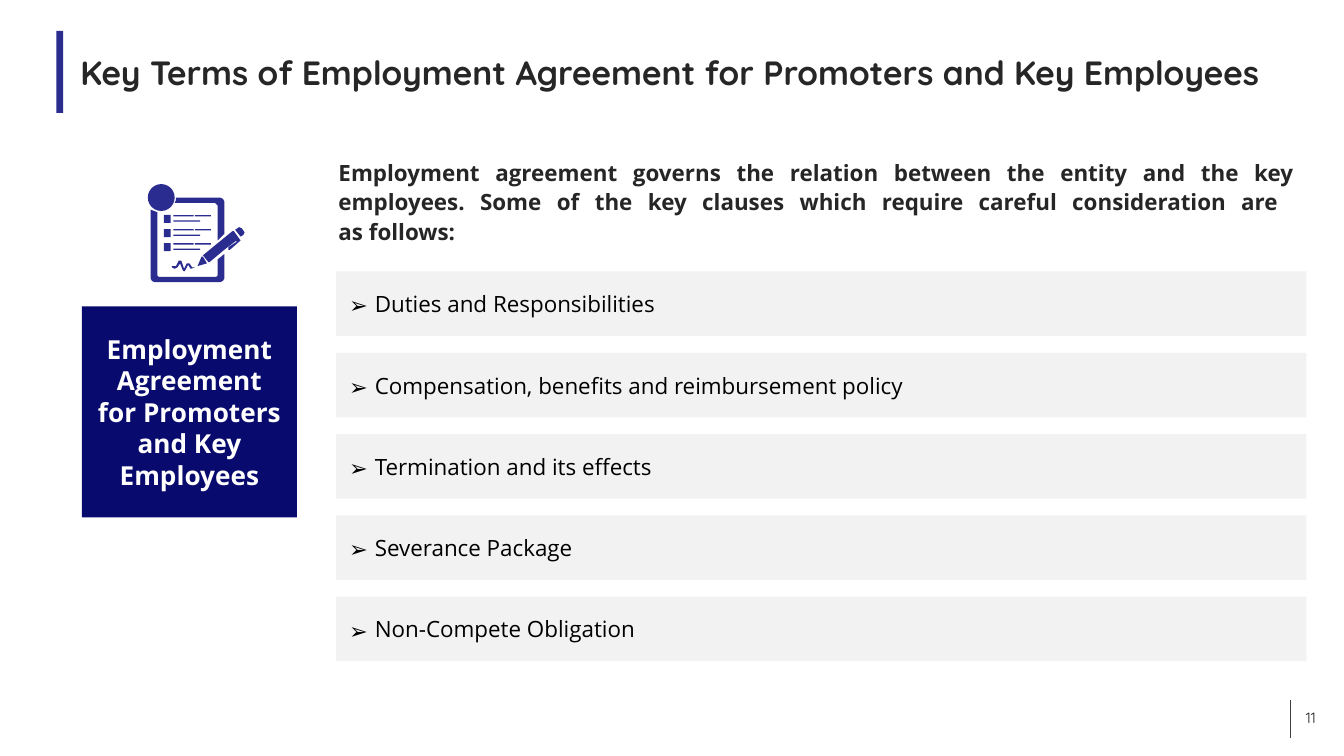
"""Build the slide on key terms of employment agreements."""
from lxml import etree
from pptx import Presentation
from pptx.dml.color import RGBColor
from pptx.enum.shapes import MSO_CONNECTOR as Link, MSO_SHAPE as Kind
from pptx.enum.text import MSO_ANCHOR as Anchor, PP_ALIGN as Align
from pptx.oxml.ns import qn
from pptx.util import Inches, Pt

rgb = RGBColor.from_string
BLUE, NAVY, DARK = "2B2C90", "080A6E", "262626"


def paint(shape, color):
    shape.shadow.inherit = False
    shape.fill.solid()
    shape.fill.fore_color.rgb = rgb(color)
    shape.line.fill.background()


def write(shape, text, size, color, bold=False, align=Align.LEFT,
          face="Open Sans", anchor=Anchor.MIDDLE, mark=None):
    frame = shape.text_frame
    frame.word_wrap = True
    frame.vertical_anchor = anchor
    para = frame.paragraphs[0]
    para.text = text
    para.alignment = align
    if mark:
        props = para._p.get_or_add_pPr()
        props.set("marL", str(Inches(0.19)))
        props.set("indent", str(-Inches(0.19)))
        etree.SubElement(props, qn("a:buFont")).set("typeface", "Noto Sans Symbols")
        etree.SubElement(props, qn("a:buChar")).set("char", mark)
    font = para.font
    font.name, font.size, font.bold = face, Pt(size), bold
    font.color.rgb = rgb(color)
    return para


prs = Presentation()
prs.slide_width = Inches(10)
prs.slide_height = prs.slide_width * 9 // 16
shapes = prs.slides.add_slide(prs.slide_layouts[6]).shapes

bar = shapes.add_shape(Kind.RECTANGLE, Inches(0.42), Inches(0.23), Inches(0.05), Inches(0.61))
paint(bar, BLUE)

rule = shapes.add_connector(Link.STRAIGHT, Inches(9.6), Inches(5.21), Inches(9.6), Inches(5.49))
rule.line.color.rgb = rgb("404040")
rule.line.width = Pt(0.75)
etree.SubElement(rule._element.spPr, qn("a:effectLst"))

title = shapes.add_textbox(Inches(0.5), Inches(0.23), Inches(9), Inches(0.61))
write(title, "Key Terms of Employment Agreement for Promoters and Key Employees",
      18, DARK, True, face="Quicksand")

intro = shapes.add_textbox(Inches(2.42), Inches(1.11), Inches(7.31), Inches(0.76))
para = write(intro, "Employment agreement governs the relation between the entity and the key "
             "employees. Some of the key clauses which require careful consideration are \v"
             "as follows:", 12, DARK, True, Align.JUSTIFY, anchor=Anchor.TOP)
para.line_spacing = Pt(16)
para.space_after = Pt(6)

label = shapes.add_shape(Kind.RECTANGLE, Inches(0.61), Inches(2.28), Inches(1.6), Inches(1.57))
paint(label, NAVY)
write(label, "Employment Agreement for Promoters and Key Employees", 14, "FFFFFF",
      True, Align.CENTER)

outlines = [
    [(112, 156), (117, 158), (117, 205), (118, 206), (161, 206), (162, 205), (162, 193),
     (167, 189), (167, 207), (166, 209), (164, 210), (115, 210), (113, 209), (112, 207)],
    [(131, 147), (164, 147), (166, 148), (167, 150), (167, 174), (162, 179), (162, 153),
     (160, 151), (130, 151), (131, 149)],
    [(173, 172), (174, 172), (179, 179), (171, 186), (170, 186), (170, 184), (176, 180),
     (176, 179), (168, 185), (156, 195), (155, 195), (151, 190)],
    [(175, 171), (178, 169), (180, 170), (182, 173), (181, 175), (179, 176)],
    [(147, 198), (150, 191), (151, 191), (154, 196)],
    [(128, 198), (131, 198), (133, 194), (135, 194), (137, 200), (139, 196), (141, 196),
     (143, 199), (145, 199), (142, 200), (140, 197), (138, 201), (137, 202), (136, 201),
     (134, 196), (132, 199), (130, 200), (128, 199)],
]
for points in outlines:
    pen = shapes.build_freeform(*points[0], scale=Inches(0.01))
    pen.add_line_segments(points[1:], close=True)
    paint(pen.convert_to_shape(), BLUE)

head = shapes.add_shape(Kind.OVAL, Inches(1.1), Inches(1.37), Inches(0.2), Inches(0.2))
paint(head, BLUE)

marks = [(1.22, 0, 0.05, 0.06), (1.29, 0, 0.15, 0.01), (1.45, 0, 0.12, 0.01),
         (1.29, 0.04, 0.2, 0.01)]
for row in range(3):
    for left, drop, width, height in marks:
        dash = shapes.add_shape(Kind.RECTANGLE, Inches(left), Inches(1.6 + row * 0.21 / 2 + drop),
                                Inches(width), Inches(height))
        paint(dash, BLUE)

terms = ["Duties and Responsibilities", "Compensation, benefits and reimbursement policy",
         "Termination and its effects", "Severance Package", "Non-Compete Obligation"]
step = (4.44 - 2.02) / (len(terms) - 1)
for row, term in enumerate(terms):
    box = shapes.add_shape(Kind.RECTANGLE, Inches(2.5), Inches(2.02 + row * step),
                           Inches(7.22), Inches(0.48))
    paint(box, "F2F2F2")
    write(box, term, 12, "000000", mark="➢")

number = shapes.add_textbox(Inches(7.56), Inches(5.19), Inches(2.33), Inches(0.3))
write(number, "11", 8, DARK, align=Align.RIGHT, face="Quicksand")

prs.save("out.pptx")
